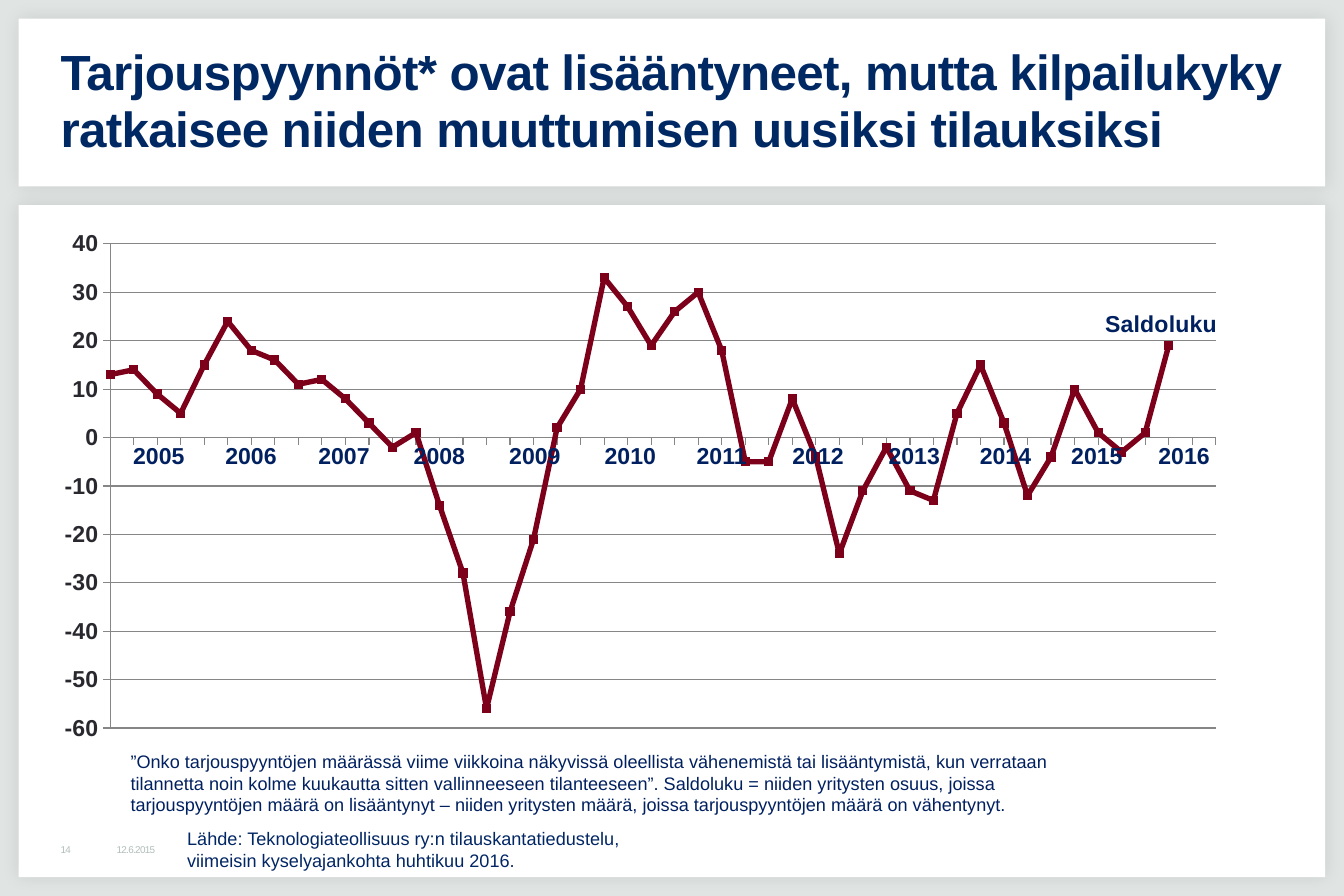
from pptx import Presentation
from pptx.chart.data import CategoryChartData
from pptx.dml.color import RGBColor
from pptx.enum.chart import XL_CHART_TYPE, XL_TICK_LABEL_POSITION, XL_TICK_MARK
from pptx.enum.shapes import MSO_SHAPE
from pptx.enum.text import MSO_ANCHOR, PP_ALIGN
from pptx.oxml import parse_xml
from pptx.oxml.ns import nsdecls, qn
from pptx.util import Pt

LINE, RECT = XL_CHART_TYPE.LINE, MSO_SHAPE.RECTANGLE
OUT, NONE = XL_TICK_MARK.OUTSIDE, XL_TICK_MARK.NONE
HIDE, LOW = XL_TICK_LABEL_POSITION.NONE, XL_TICK_LABEL_POSITION.LOW
TOP, MID, CENTER = MSO_ANCHOR.TOP, MSO_ANCHOR.MIDDLE, PP_ALIGN.CENTER

# Content
TITLE = ["Tarjouspyynnöt* ovat lisääntyneet, mutta kilpailukyky "
         "ratkaisee niiden muuttumisen uusiksi tilauksiksi"]
NOTE = ["”Onko tarjouspyyntöjen määrässä viime viikkoina näkyvissä oleellista "
        "vähenemistä tai lisääntymistä, kun verrataan tilannetta noin kolme "
        "kuukautta sitten vallinneeseen tilanteeseen”. Saldoluku = niiden "
        "yritysten osuus, joissa tarjouspyyntöjen määrä on lisääntynyt – niiden "
        "yritysten määrä, joissa tarjouspyyntöjen määrä on vähentynyt."]
SOURCE = ["Lähde: Teknologiateollisuus ry:n tilauskantatiedustelu,",
          "viimeisin kyselyajankohta huhtikuu 2016."]
DATE, PAGE = ["12.6.2015"], ["14"]
LABEL = "Saldoluku"
YEARS = range(2005, 2017)
WIDTHS = [57, 55, 58, 58, 58, 58, 53, 64, 53, 58, 53, 53]
SALDO = [13, 14, 9, 5, 15, 24, 18, 16, 11, 12, 8, 3,
         -2, 1, -14, -28, -56, -36, -21, 2, 10, 33, 27, 19,
         26, 30, 18, -5, -5, 8, -4, -24, -11, -2, -11, -13,
         5, 15, 3, -12, -4, 10, 1, -3, 1, 19, None, None]

THEME = {
    "font": "Arial", "back": "E0E5E3", "card": "FFFFFF", "title": "002964",
    "note": "002060", "source": "002664", "foot": "B1BEB9", "axis": "29282E",
    "grid": "868686", "line": "7D001B",
    "big": 30, "mid": 14, "small": 11, "tiny": 6,
}
WIDE, HIGH, GAP, HEAD = 816.5, 544.3, 11.34, 102
NO_STYLE = "{2D5ABB26-0587-4C30-8999-92F81FD0307C}"


def color(name):
    return RGBColor.from_string(THEME[name])


def style(font, size, hue, bold=False):
    font.name, font.size, font.bold = THEME["font"], Pt(THEME[size]), bold
    font.color.rgb = color(hue)


def inset(part, left, top, right, bottom):
    part.margin_left, part.margin_top = Pt(left), Pt(top)
    part.margin_right, part.margin_bottom = Pt(right), Pt(bottom)


def add_text(slide, box, lines, size, hue, pad, anchor=TOP, bold=False,
             space=None, tight=0):
    frame = slide.shapes.add_textbox(*map(Pt, box)).text_frame
    frame.word_wrap, frame.vertical_anchor = True, anchor
    inset(frame, *pad)
    for i, line in enumerate(lines):
        para = frame.add_paragraph() if i else frame.paragraphs[0]
        if space:
            para.line_spacing = space
        run = para.add_run()
        run.text = line
        style(run.font, size, hue, bold)
        if tight:
            run.font._element.set("spc", str(tight))


def add_card(slide, top, height):
    card = slide.shapes.add_shape(
        RECT, Pt(GAP), Pt(top), Pt(WIDE - 2 * GAP), Pt(height))
    card.fill.solid()
    card.fill.fore_color.rgb = color("card")
    card.line.fill.background()
    card._element.spPr.append(parse_xml(
        f'<a:effectLst {nsdecls("a")}><a:outerShdw blurRad="127000" dist="0" '
        'dir="2700000" algn="ctr" rotWithShape="0"><a:srgbClr val="000000">'
        '<a:alpha val="10000"/></a:srgbClr></a:outerShdw></a:effectLst>'))


def set_layout(part, index, inner=False, **spots):
    old = part.find(qn("c:layout"))
    if old is not None:
        part.remove(old)
    bits = '<c:layoutTarget val="inner"/>' if inner else ""
    bits += "".join(f'<c:{k}Mode val="edge"/>' for k in spots if k in "xy")
    bits += "".join(f'<c:{k} val="{v}"/>' for k, v in spots.items())
    part.insert(index, parse_xml(
        f'<c:layout {nsdecls("c")}><c:manualLayout>{bits}'
        '</c:manualLayout></c:layout>'))


def add_graph(slide):
    data = CategoryChartData()
    data.categories = [str(n + 1) for n in range(len(SALDO))]
    data.add_series(LABEL, SALDO)
    chart = slide.shapes.add_chart(
        LINE, Pt(28), Pt(134.6), Pt(720), Pt(316), data).chart
    style(chart.font, "mid", "axis")
    chart.has_legend = False

    # Series label
    chart.has_title = True
    title = chart.chart_title
    run = title.text_frame.paragraphs[0].add_run()
    run.text = LABEL
    style(run.font, "mid", "note", True)
    title.include_in_layout = True
    set_layout(title._element, 1, x=0.89, y=0.16)

    # Axes
    cats, vals = chart.category_axis, chart.value_axis
    for axis in (cats, vals):
        axis.major_tick_mark, axis.minor_tick_mark = OUT, NONE
        axis.format.line.color.rgb = color("grid")
        axis.format.line.width = Pt(0.75)
        style(axis.tick_labels.font, "mid", "axis", True)
    cats.tick_label_position = HIDE
    cats.has_major_gridlines = False
    vals.tick_label_position = LOW
    vals.minimum_scale, vals.maximum_scale, vals.major_unit = -60, 40, 10
    vals.has_major_gridlines = True
    vals.major_gridlines.format.line.color.rgb = color("grid")
    vals.major_gridlines.format.line.width = Pt(0.75)
    node = vals._element
    for old in node.findall(qn("c:crossBetween")):
        node.remove(old)
    node.find(qn("c:crosses")).addnext(
        parse_xml(f'<c:crossBetween {nsdecls("c")} val="midCat"/>'))

    # Line
    plot = chart.plots[0]
    plot.vary_by_categories = False
    line = plot.series[0]
    line.smooth = False
    line.format.line.color.rgb = color("line")
    line.format.line.width = Pt(3.25)
    line.marker.style = None
    area = chart._chartSpace.chart.plotArea
    set_layout(area, 0, True, x=0.054, y=0.043, w=0.933, h=0.931)


def add_years(slide):
    table = slide.shapes.add_table(
        1, len(YEARS), Pt(68), Pt(266.4), Pt(sum(WIDTHS)), Pt(21)).table
    table.first_row = table.horz_banding = False
    table._tbl.tblPr.find(qn("a:tableStyleId")).text = NO_STYLE
    for i, (year, width) in enumerate(zip(YEARS, WIDTHS)):
        table.columns[i].width = Pt(width)
        cell = table.cell(0, i)
        cell.fill.background()
        inset(cell, 6.5, 3, 6.5, 3)
        para = cell.text_frame.paragraphs[0]
        para.alignment = CENTER
        run = para.add_run()
        run.text = str(year)
        style(run.font, "mid", "note", True)


def main():
    deck = Presentation()
    deck.slide_width, deck.slide_height = Pt(WIDE), Pt(HIGH)
    slide = deck.slides.add_slide(deck.slide_layouts[6])
    slide.background.fill.solid()
    slide.background.fill.fore_color.rgb = color("back")

    # Cards
    add_card(slide, GAP, HEAD)
    body = HEAD + 2 * GAP
    add_card(slide, body, HIGH - GAP - body)

    # Footer and title
    for left, width, lines in ((68, 102, DATE), (34, 34, PAGE)):
        add_text(slide, (left, 510.5, width, 11.5), lines, "tiny", "foot",
                 (2.8, 2.8, 2.8, 2.8), MID, tight=-40)
    add_text(slide, (34, 22.5, 771, 79), TITLE, "big", "title",
             (2.8, 3.6, 7.2, 3.6), MID, True, 0.95, -40)

    # Notes
    pad = (5.7, 2.8, 5.7, 2.8)
    add_text(slide, (108, 499.7, 471, 32.4), SOURCE, "small", "source", pad)
    add_text(slide, (73.6, 453, 602, 46), NOTE, "small", "note", pad)

    # Chart with its year row
    add_graph(slide)
    add_years(slide)
    deck.save("out.pptx")


if __name__ == "__main__":
    main()
